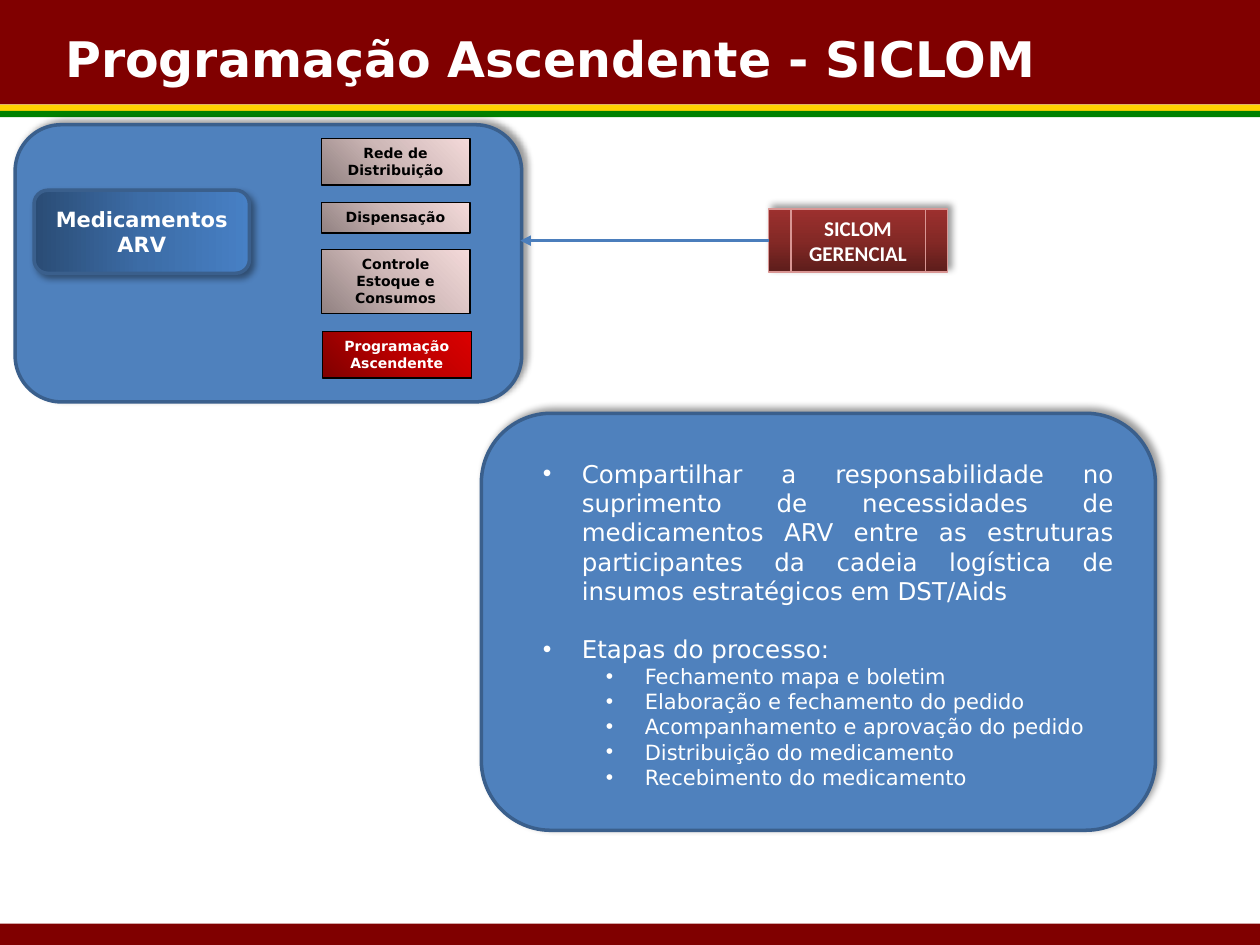
from lxml import etree
from pptx import Presentation
from pptx.dml.color import RGBColor
from pptx.enum.shapes import MSO_CONNECTOR, MSO_SHAPE
from pptx.enum.text import MSO_ANCHOR, MSO_AUTO_SIZE, PP_ALIGN
from pptx.oxml import parse_xml
from pptx.oxml.ns import nsdecls, qn
from pptx.util import Inches, Pt

RECT, ROUNDED = MSO_SHAPE.RECTANGLE, MSO_SHAPE.ROUNDED_RECTANGLE
PROCESS = MSO_SHAPE.FLOWCHART_PREDEFINED_PROCESS
CENTER, LEFT, JUSTIFY = PP_ALIGN.CENTER, PP_ALIGN.LEFT, PP_ALIGN.JUSTIFY
TOP, MIDDLE = MSO_ANCHOR.TOP, MSO_ANCHOR.MIDDLE
SIDE_LEFT = 1

COLORS = {
    "maroon": "800000", "yellow": "FFD200", "green": "008000",
    "panel": "4F81BD", "panel_edge": "3A5F8C", "arrow": "4B7EBC",
    "system_edge": "D99694", "white": "FFFFFF", "black": "000000",
}
# Stop colours at 0, 50 and 100 %, then the clockwise angle
GRADIENTS = {
    "medicines": (("2A4C75", "3C6CA6", "4780C5"), 0),
    "module": (("918181", "CEB8B7", "F4DADA"), 315),
    "current": (("7F0000", "B80000", "DB0000"), 315),
    "system": (("5D1D1B", "842926", "9C302E"), 270),
}
FONT = "DejaVu Sans"
INDENT = 0.31

MODULES = [  # text, left, top, height, gradient, text colour
    ("Rede de Distribuição", 2.55, 1.1, 0.37, "module", "black"),
    ("Dispensação", 2.55, 1.61, 0.24, "module", "black"),
    ("Controle Estoque e Consumos", 2.55, 1.98, 0.51, "module", "black"),
    ("Programação Ascendente", 2.56, 2.63, 0.37, "current", "white"),
]
GOALS = [  # text, level, space before
    ("Compartilhar a responsabilidade no suprimento de necessidades de "
     "medicamentos ARV entre as estruturas participantes da cadeia "
     "logística de insumos estratégicos em DST/Aids", 0, 0),
    ("Etapas do processo:", 0, 16.3),
    ("Fechamento mapa e boletim", 1, 0),
    ("Elaboração e fechamento do pedido", 1, 0),
    ("Acompanhamento e aprovação do pedido", 1, 0),
    ("Distribuição do medicamento", 1, 0),
    ("Recebimento do medicamento", 1, 0),
]


def rgb(name):
    return RGBColor.from_string(COLORS[name])


def inches(box):
    return [Inches(value) for value in box]


def set_gradient(shape, name):
    stops, angle = GRADIENTS[name]
    shape.fill.gradient()
    shape.fill.gradient_angle = (360 - angle) % 360
    stop_list = shape._element.spPr.find(".//" + qn("a:gsLst"))
    for stop in list(stop_list):
        stop_list.remove(stop)
    for position, color in zip((0, 50000, 100000), stops):
        stop_list.append(parse_xml(
            f'<a:gs {nsdecls("a")} pos="{position}"><a:srgbClr val="{color}"/></a:gs>'))


def add_shadow(shape, angle):
    effects = shape._element.spPr.find(qn("a:effectLst"))
    effects.append(parse_xml(
        f'<a:outerShdw {nsdecls("a")} blurRad="{Pt(4)}" dist="{Pt(3)}" '
        f'dir="{angle * 60000}" rotWithShape="0"><a:srgbClr val="{COLORS["black"]}">'
        '<a:alpha val="40000"/></a:srgbClr></a:outerShdw>'))


def add_box(slide, kind, box, fill, edge=None, width=0.75, shadow=None):
    shape = slide.shapes.add_shape(kind, *inches(box))
    shape.shadow.inherit = False
    if fill in GRADIENTS:
        set_gradient(shape, fill)
    else:
        shape.fill.solid()
        shape.fill.fore_color.rgb = rgb(fill)
    if edge:
        shape.line.color.rgb = rgb(edge)
        shape.line.width = Pt(width)
    else:
        shape.line.fill.background()
    if shadow is not None:
        add_shadow(shape, shadow)
    return shape


def format_font(paragraph, color="white", **values):
    for name, value in {"name": FONT, **values}.items():
        setattr(paragraph.font, name, value)
    paragraph.font.color.rgb = rgb(color)


def set_label(shape, text, size, align=CENTER, anchor=MIDDLE, **font):
    frame = shape.text_frame
    frame.word_wrap = True
    frame.vertical_anchor = anchor
    if anchor == TOP:
        frame.auto_size = MSO_AUTO_SIZE.SHAPE_TO_FIT_TEXT
    paragraph = frame.paragraphs[0]
    paragraph.text = text
    paragraph.alignment = align
    format_font(paragraph, size=Pt(size), bold=True, **font)


def add_bands(slide, width, height):
    """Header with its two stripes, and the footer."""
    top = 0
    for color, depth in (("maroon", 0.83), ("yellow", 0.05), ("green", 0.05)):
        add_box(slide, RECT, (0, top, width, depth), color)
        top += depth
    add_box(slide, RECT, (0, height - 0.17, width, 0.17), "maroon")


def add_title(slide, box):
    title = slide.shapes.add_textbox(*inches(box))
    set_label(title, "Programação Ascendente - SICLOM", 28, LEFT, TOP)


def add_panel(slide, box):
    return add_box(slide, ROUNDED, box, "panel", "panel_edge", 2, shadow=315)


def add_medicines_panel(slide, box):
    add_panel(slide, box)
    left, top = box[:2]
    medicines = add_box(slide, ROUNDED, (left + 0.15, top + 0.52, 1.71, 0.66),
                        "medicines", "panel_edge", 2, shadow=45)
    set_label(medicines, "Medicamentos ARV", 12)
    for text, module_left, module_top, height, fill, color in MODULES:
        module = add_box(slide, RECT, (module_left, module_top, 1.18, height), fill, "black")
        set_label(module, text, 8, anchor=TOP, color=color)


def add_system(slide, box, arrow_end):
    """System box and the arrow from its left side to the panel."""
    system = add_box(slide, PROCESS, box, "system", "system_edge", shadow=315)
    set_label(system, "SICLOM GERENCIAL", 12, name="Calibri")
    left, top, _, height = box
    middle = top + height / 2
    arrow = slide.shapes.add_connector(
        MSO_CONNECTOR.STRAIGHT, *inches((left, middle, arrow_end, middle)))
    arrow.begin_connect(system, SIDE_LEFT)
    arrow.line.color.rgb = rgb("arrow")
    arrow.line.width = Pt(1.5)
    etree.SubElement(arrow.line._get_or_add_ln(), qn("a:tailEnd"), type="triangle")
    etree.SubElement(arrow._element.spPr, qn("a:effectLst"))


def add_goals_panel(slide, box):
    add_panel(slide, box)
    left, top = box[:2]
    goals = slide.shapes.add_textbox(*inches((left + 0.39, top + 0.31, 4.73, 2.76)))
    frame = goals.text_frame
    frame.word_wrap = True
    frame.auto_size = MSO_AUTO_SIZE.SHAPE_TO_FIT_TEXT
    for index, (text, level, space) in enumerate(GOALS):
        paragraph = frame.add_paragraph() if index else frame.paragraphs[0]
        paragraph.text = text
        paragraph.level = level
        paragraph.alignment = JUSTIFY
        if space:
            paragraph.space_before = Pt(space)
        properties = paragraph._p.get_or_add_pPr()
        properties.set("marL", str(Inches(INDENT + 0.5 * level)))
        properties.set("indent", str(Inches(-INDENT)))
        etree.SubElement(properties, qn("a:buFont"), typeface="Arial")
        etree.SubElement(properties, qn("a:buChar"), char="•")
        format_font(paragraph, size=Pt(14 - 2 * level))


def main():
    width, height = 10, 7.5
    presentation = Presentation()
    presentation.slide_width, presentation.slide_height = inches((width, height))
    slide = presentation.slides.add_slide(presentation.slide_layouts[6])
    add_bands(slide, width, height)
    add_title(slide, (0.42, 0.18, 8.33, 0.57))
    add_medicines_panel(slide, (0.12, 0.99, 4.02, 2.2))
    add_system(slide, (6.1, 1.66, 1.42, 0.5), arrow_end=4.13)
    add_goals_panel(slide, (3.82, 3.28, 5.35, 3.31))
    presentation.save("out.pptx")


if __name__ == "__main__":
    main()
